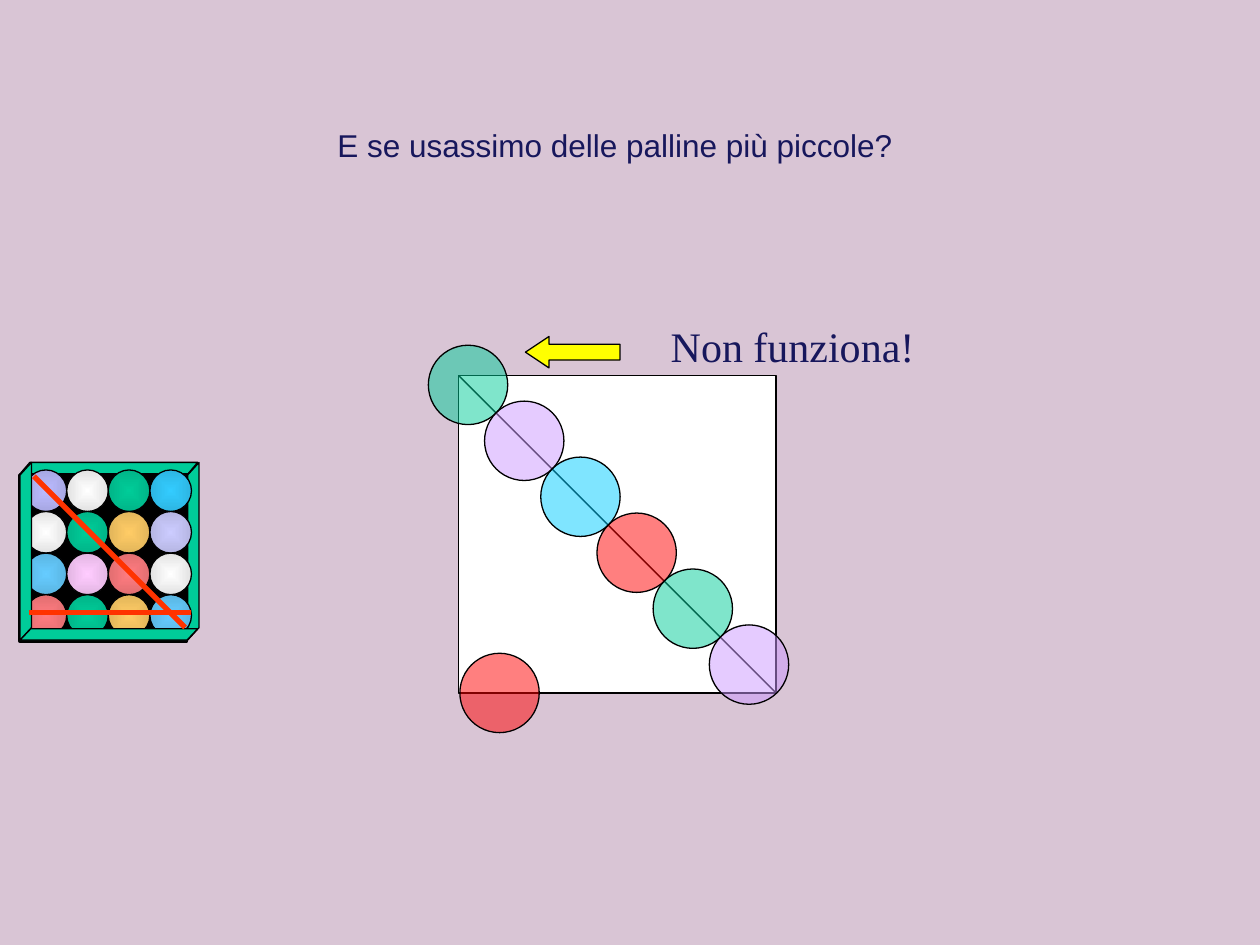
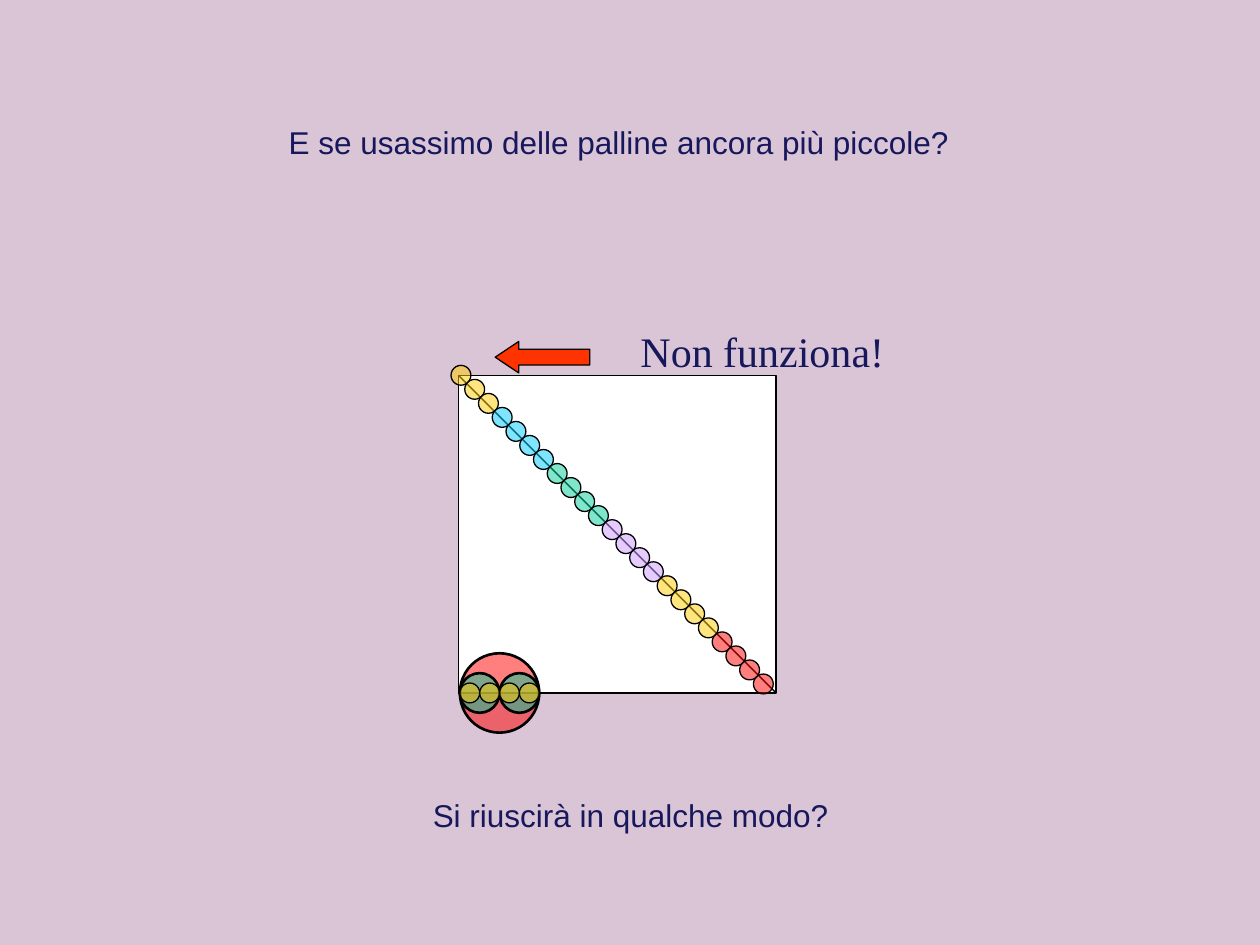
import lxml.etree
import pptx
import pptx.dml.color
import pptx.enum.shapes
import pptx.enum.text
import pptx.oxml
import pptx.oxml.ns
import pptx.util

Inches = pptx.util.Inches
Pt = pptx.util.Pt
SHAPE = pptx.enum.shapes.MSO_SHAPE

BACKGROUND, INK, BLACK, WHITE = "D9C5D5", "17175C", "000000", "FFFFFF"
RED, GREEN, PURPLE, CYAN, GOLD = "FF0000", "00CC99", "CC99FF", "00CCFF", "FFCC00"
ORANGE, YELLOW = "FF3300", "FFFF00"
SQUARE = (3.64, 2.98, 2.52)
BALL = 0.63
CRATE = (0.16, 3.67)
CRATE_BALLS = [
    ["BBBBFF", "FFFFFF", "00CC99", "33CCFF"],
    ["FFFFFF", "00CC99", "FFCC66", "CCCCFF"],
    ["66CCFF", "FFCCFF", "FF7C80", "FFFFFF"],
    ["FF7C80", "00CC99", "FFCC66", "66CCFF"],
]


def rgb(color):
    """Turn a hex string into a colour."""
    return pptx.dml.color.RGBColor.from_string(color)


def darker(color):
    """Return the rim shade of a crate ball colour."""
    return "".join(f"{round(int(color[i:i + 2], 16) * 0.886):02X}" for i in (0, 2, 4))


def add_shape(slide, kind, box, fill, line_width=0.75, opacity=100):
    """Add a filled preset shape with a black outline."""
    shape = slide.shapes.add_shape(kind, *map(Inches, box))
    shape.shadow.inherit = False
    shape.fill.solid()
    shape.fill.fore_color.rgb = rgb(fill)
    shape.line.color.rgb = rgb(BLACK)
    shape.line.width = Pt(line_width)
    if opacity < 100:
        color = shape._element.spPr.find(".//" + pptx.oxml.ns.qn("a:srgbClr"))
        alpha = lxml.etree.SubElement(color, pptx.oxml.ns.qn("a:alpha"))
        alpha.set("val", str(opacity * 1000))
    return shape


def add_line(slide, start, end, color=BLACK, width=0.75):
    """Add a straight line between two points."""
    line = slide.shapes.add_connector(
        pptx.enum.shapes.MSO_CONNECTOR.STRAIGHT, *map(Inches, (*start, *end)))
    line.line.color.rgb = rgb(color)
    line.line.width = Pt(width)
    lxml.etree.SubElement(line._element.spPr, pptx.oxml.ns.qn("a:effectLst"))


def add_text(slide, box, text, size=18, font="Arial"):
    """Add one centred line of text."""
    frame = slide.shapes.add_textbox(*map(Inches, box)).text_frame
    frame.word_wrap = True
    frame.vertical_anchor = pptx.enum.text.MSO_ANCHOR.MIDDLE
    paragraph = frame.paragraphs[0]
    paragraph.text = text
    paragraph.alignment = pptx.enum.text.PP_ALIGN.CENTER
    paragraph.font.name = font
    paragraph.font.size = Pt(size)
    paragraph.font.color.rgb = rgb(INK)


def add_verdict(slide, left, top, color):
    """Add the block arrow and its verdict."""
    arrow = add_shape(slide, SHAPE.LEFT_ARROW, (left, top, 0.75, 0.25), color)
    arrow.adjustments[1] = 0.75
    add_text(slide, (left + 0.83, top - 0.18, 2.58, 0.5), "Non funziona!", 24, "Times New Roman")


def add_square(slide, box):
    """Add the white square and its diagonal."""
    left, top, side = box
    add_shape(slide, SHAPE.RECTANGLE, (left, top, side, side), WHITE)
    add_line(slide, (left, top), (left + side, top + side))


def add_diagonal_balls(slide, box, first, last, size, colors):
    """Space translucent balls evenly between two offsets in the square."""
    left, top, _ = box
    for index, color in enumerate(colors):
        share = index / (len(colors) - 1)
        x, y = (a + (b - a) * share for a, b in zip(first, last))
        add_shape(slide, SHAPE.OVAL, (left + x, top + y, size, size), color, opacity=50)


def add_base_balls(slide, box, count, color, line_width=0.75):
    """Fill the first ball's width on the square's base with smaller balls."""
    left, top, side = box
    size = BALL / count
    for index in range(count):
        ball = (left + 0.01 + index * size, top + side - size / 2, size, size)
        add_shape(slide, SHAPE.OVAL, ball, color, line_width, 50)


def add_crate_bar(slide, left, top, rotation, flip_vertical, slant):
    """Add one slanted side of the crate."""
    bar = add_shape(slide, SHAPE.PARALLELOGRAM, (left, top, 1.41, 0.09), GREEN)
    bar.adjustments[0] = slant
    bar.rotation = rotation
    transform = bar._element.spPr.get_or_add_xfrm()
    transform.set("flipH", "1")
    if flip_vertical:
        transform.set("flipV", "1")


def add_crate_ball(slide, left, top, color):
    """Add a ball shaded from its centre to its rim."""
    ball = add_shape(slide, SHAPE.OVAL, (left, top, 0.33, 0.33), color)
    ball.fill.gradient()
    for stop, shade in zip(ball.fill.gradient_stops, (color, darker(color))):
        stop.color.rgb = rgb(shade)
    linear = ball._element.spPr.find(".//" + pptx.oxml.ns.qn("a:lin"))
    radial = pptx.oxml.parse_xml(
        f'<a:path {pptx.oxml.ns.nsdecls("a")} path="shape">'
        '<a:fillToRect l="50000" t="50000" r="50000" b="50000"/></a:path>')
    linear.getparent().replace(linear, radial)


def add_crate(slide, left, top):
    """Add the crate of sixteen balls with its side and diagonal marked."""
    add_shape(slide, SHAPE.RECTANGLE, (left, top + 0.1, 1.32, 1.32), BLACK, 2.25)
    add_crate_bar(slide, left + 0.67, top + 0.66, 90, False, 1.1)
    add_crate_bar(slide, left, top, 0, True, 0.86)
    for row, colors in enumerate(CRATE_BALLS):
        for column, color in enumerate(colors):
            add_crate_ball(slide, left + 0.04 + 0.33 * column, top + 0.06 + 0.33 * row, color)
    add_crate_bar(slide, left - 0.66, top + 0.66, 90, False, 1.1)
    add_crate_bar(slide, left, top + 1.32, 0, True, 0.94)
    add_line(slide, (left + 0.07, top + 1.19), (left + 1.36, top + 1.19), ORANGE, 3)
    add_line(slide, (left + 0.11, top + 0.11), (left + 1.31, top + 1.31), ORANGE, 3)


def add_slide(presentation):
    """Add a blank slide with the shared background."""
    slide = presentation.slides.add_slide(presentation.slide_layouts[6])
    slide.background.fill.solid()
    slide.background.fill.fore_color.rgb = rgb(BACKGROUND)
    return slide


def build_smaller_balls(presentation):
    """Build the slide with six balls on the diagonal."""
    slide = add_slide(presentation)
    add_text(slide, (0.67, 0.95, 8.42, 0.4), "E se usassimo delle palline più piccole?")
    add_square(slide, SQUARE)
    add_base_balls(slide, SQUARE, 1, RED)
    add_crate(slide, *CRATE)
    colors = [GREEN, PURPLE, CYAN, RED, GREEN, PURPLE]
    add_diagonal_balls(slide, SQUARE, (-0.24, -0.24), (1.99, 1.98), BALL, colors)
    add_verdict(slide, 4.17, 2.67, YELLOW)


def build_tiny_balls(presentation):
    """Build the slide with twenty-three balls on the diagonal."""
    slide = add_slide(presentation)
    add_text(slide, (0.2, 0.93, 9.42, 0.4), "E se usassimo delle palline ancora più piccole?")
    add_square(slide, SQUARE)
    for count, color, line_width in ((1, RED, 1.5), (2, GREEN, 1.5), (4, GOLD, 0.75)):
        add_base_balls(slide, SQUARE, count, color, line_width)
    colors = [GOLD] * 3 + [c for c in (CYAN, GREEN, PURPLE, GOLD, RED) for _ in range(4)]
    add_diagonal_balls(slide, SQUARE, (-0.06, -0.08), (2.34, 2.37), BALL / 4, colors)
    add_verdict(slide, 3.93, 2.71, ORANGE)
    add_text(slide, (1.4, 6.27, 7.21, 0.4), "Si riuscirà in qualche modo?")


def main():
    """Build and save the presentation."""
    presentation = pptx.Presentation()
    presentation.slide_width = Inches(10)
    presentation.slide_height = Inches(7.5)
    build_smaller_balls(presentation)
    build_tiny_balls(presentation)
    presentation.save("out.pptx")


if __name__ == "__main__":
    main()
